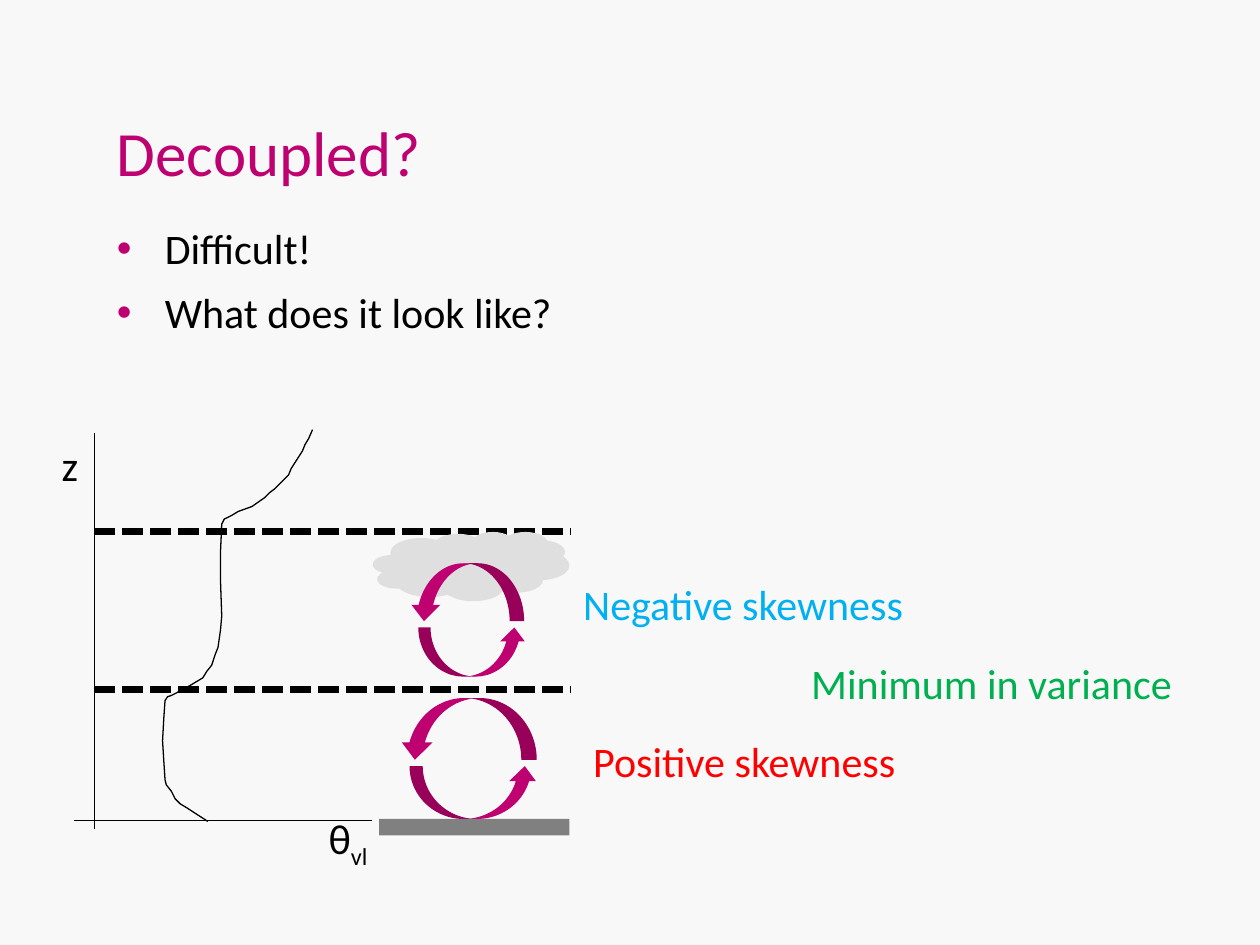
from lxml import etree
from pptx import Presentation
from pptx.dml.color import RGBColor
from pptx.enum import dml, shapes, text
from pptx.oxml.ns import qn
from pptx.util import Inches, Pt

COLORS = {
    "background": "F8F8F8", "accent": "BF0071", "black": "000000",
    "cloud": "DFDFDF", "ground": "808080",
    "negative": "00B0F0", "positive": "FF0000", "minimum": "00B050",
}
FONT = "Calibri"
TITLE = "Decoupled?"
BULLETS = ["Difficult!", "What does it look like?"]

# text, optional subscript, box, colour
LABELS = [
    ("θ", "vl", (2.51, 6.4, 0.84, 0.5), "black"),
    ("z", "", (0.39, 3.44, 0.59, 0.5), "black"),
    ("Negative skewness", "", (4.53, 4.54, 3.15, 0.5), "negative"),
    ("Positive skewness", "", (4.61, 5.79, 4.8, 0.5), "positive"),
    ("Minimum in variance", "", (6.34, 5.17, 3.54, 0.5), "minimum"),
]
AXES = [(0.75, 3.44, 0.75, 6.58), (0.59, 6.51, 2.95, 6.51)]
LAYER_TOPS = [5.47, 4.22]
# box, rotation
EDDY_ARROWS = [
    ((3.25, 6.08, 1.02, 0.42), 0), ((3.17, 5.54, 1.09, 0.49), 180),
    ((3.32, 4.98, 0.86, 0.39), 0), ((3.25, 4.47, 0.91, 0.46), 180),
]
# temperature profile, from the surface upwards
PROFILE = [
    (1.65, 6.52), (1.48, 6.41), (1.43, 6.38), (1.39, 6.34), (1.36, 6.28),
    (1.32, 6.23), (1.31, 6.19), (1.3, 6.04), (1.29, 5.88), (1.3, 5.7),
    (1.31, 5.56), (1.33, 5.53), (1.36, 5.52), (1.4, 5.5), (1.45, 5.47),
    (1.51, 5.44), (1.61, 5.38), (1.64, 5.33), (1.68, 5.28), (1.71, 5.19),
    (1.73, 5.14), (1.75, 5), (1.76, 4.89), (1.75, 4.61), (1.75, 4.38),
    (1.76, 4.16), (1.78, 4.12), (1.84, 4.09), (1.89, 4.06), (2, 4.02),
    (2.1, 3.95), (2.14, 3.91), (2.18, 3.88), (2.29, 3.77), (2.31, 3.72),
    (2.4, 3.58), (2.42, 3.53), (2.45, 3.48), (2.48, 3.41),
]


def color(name):
    return RGBColor.from_string(COLORS[name])


def add_text(slide, lines, box, size=24, fill="black", subscript="", wrap=True,
             anchor=text.MSO_ANCHOR.TOP, bullet=False):
    tf = slide.shapes.add_textbox(*map(Inches, box)).text_frame
    tf.word_wrap = wrap
    tf.vertical_anchor = anchor
    for i, line in enumerate(lines):
        p = tf.paragraphs[0] if i == 0 else tf.add_paragraph()
        if bullet:
            add_bullet(p)
            p.line_spacing = 1.1
            if i:
                p.space_before = Pt(0.2 * size)
        for part, baseline in ((line, 0), (subscript, -25000)):
            if not part:
                continue
            r = p.add_run()
            r.text = part
            r.font.name, r.font.size = FONT, Pt(size)
            r.font.color.rgb = color(fill)
            if baseline:
                r.font._element.set("baseline", str(baseline))


def add_bullet(p):
    pPr = p._p.get_or_add_pPr()
    pPr.set("marL", str(Inches(0.38)))
    pPr.set("indent", str(-Inches(0.38)))
    clr = etree.SubElement(pPr, qn("a:buClr"))
    etree.SubElement(clr, qn("a:srgbClr"), val=COLORS["accent"])
    etree.SubElement(pPr, qn("a:buFont"), typeface="Arial")
    etree.SubElement(pPr, qn("a:buChar"), char="•")


def add_line(slide, x1, y1, x2, y2, width=0.75, dash=None):
    line = slide.shapes.add_connector(
        shapes.MSO_CONNECTOR.STRAIGHT, *map(Inches, (x1, y1, x2, y2)))
    line.line.color.rgb = color("black")
    line.line.width = Pt(width)
    if dash:
        line.line.dash_style = dash
    etree.SubElement(line._element.spPr, qn("a:effectLst"))


def add_shape(slide, kind, box, fill):
    sp = slide.shapes.add_shape(kind, *map(Inches, box))
    sp.shadow.inherit = False
    sp.fill.solid()
    sp.fill.fore_color.rgb = color(fill)
    sp.line.fill.background()
    return sp


def add_profile(slide):
    start, *rest = [(Inches(x), Inches(y)) for x, y in PROFILE]
    builder = slide.shapes.build_freeform(*start)
    builder.add_line_segments(rest, close=False)
    sp = builder.convert_to_shape()
    sp.shadow.inherit = False
    sp.fill.background()
    sp.line.color.rgb = color("black")
    sp.line.width = Pt(0.75)


def main():
    prs = Presentation()
    prs.slide_width, prs.slide_height = Inches(10), Inches(7.5)
    s = prs.slides.add_slide(prs.slide_layouts[6])
    s.background.fill.solid()
    s.background.fill.fore_color.rgb = color("background")

    add_text(s, BULLETS, (0.83, 1.68, 8.67, 4.75), bullet=True)
    add_text(s, [TITLE], (0.83, 0.3, 6.77, 1.25), size=36, fill="accent",
             wrap=False, anchor=text.MSO_ANCHOR.BOTTOM)
    for y in LAYER_TOPS:
        add_line(s, 0.75, y, 4.53, y, 4, dml.MSO_LINE.SQUARE_DOT)
    for axis in AXES:
        add_line(s, *axis)
    add_profile(s)

    kinds = shapes.MSO_SHAPE
    add_shape(s, kinds.CLOUD, (2.96, 4.22, 1.56, 0.55), "cloud")
    for box, rotation in EDDY_ARROWS:
        arrow = add_shape(s, kinds.CURVED_UP_ARROW, box, "accent")
        arrow.rotation = rotation
        arrow.adjustments[2] = 0.283
    add_shape(s, kinds.RECTANGLE, (3.01, 6.5, 1.51, 0.13), "ground")

    for label, subscript, box, fill in LABELS:
        add_text(s, [label], box, fill=fill, subscript=subscript)
    prs.save("out.pptx")


if __name__ == "__main__":
    main()
